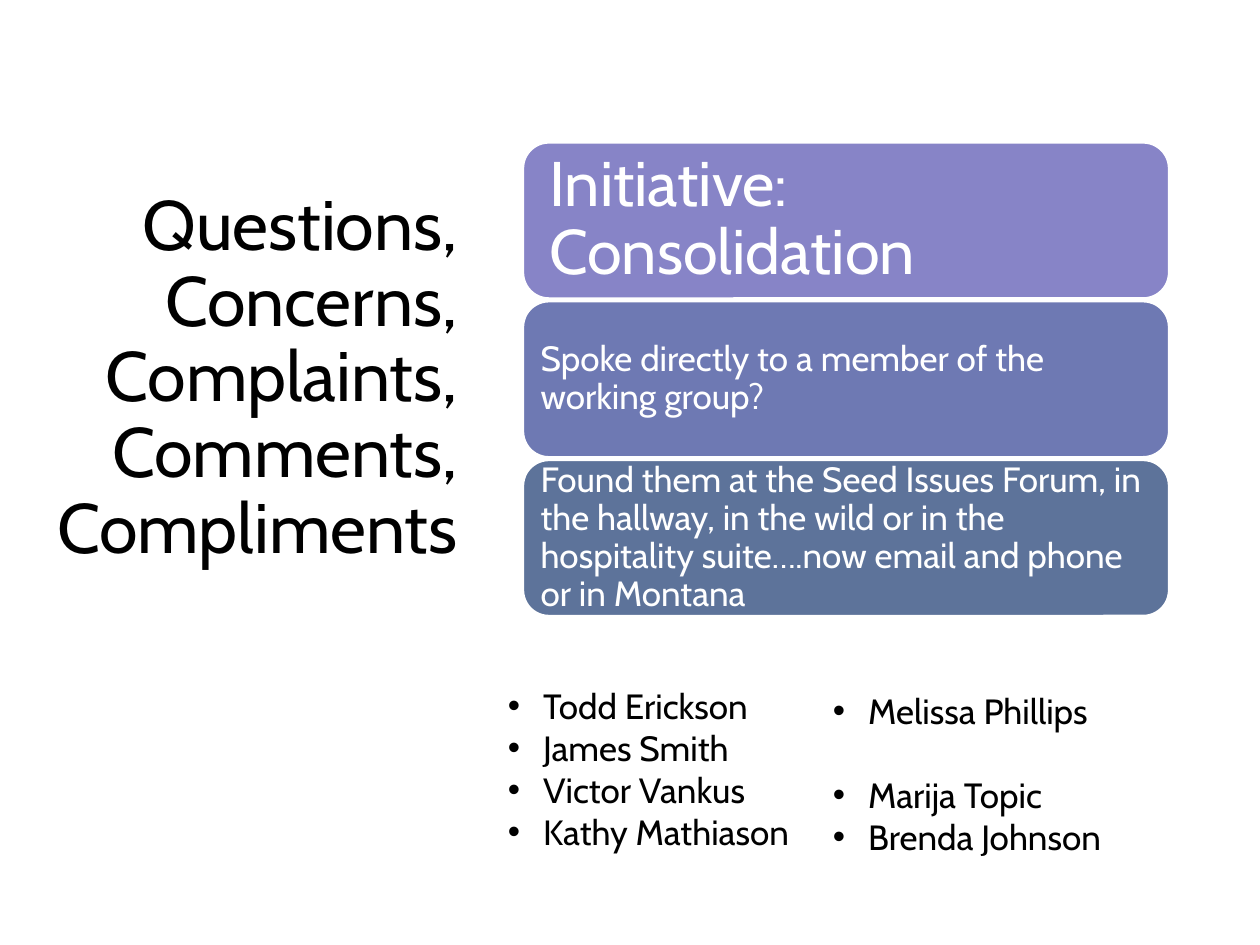
import pptx
import pptx.util
import pptx.dml.color
import pptx.enum.shapes
import pptx.enum.text
import pptx.oxml.ns
import lxml.etree

Inches = pptx.util.Inches
Pt = pptx.util.Pt
ANCHOR = pptx.enum.text.MSO_ANCHOR
ALIGN = pptx.enum.text.PP_ALIGN

COLORS = {
    "text": "000000",
    "white": "FFFFFF",
    "lilac": "8784C7",
    "violet": "6E79B3",
    "slate": "5D739A",
}


def rgb(name):
    return pptx.dml.color.RGBColor.from_string(COLORS[name])


def add_run(p, text, size, color):
    r = p.add_run()
    r.text = text
    r.font.name = "Cabin"
    r.font.size = Pt(size)
    r.font.color.rgb = rgb(color)


prs = pptx.Presentation()
prs.slide_width = Inches(10)
prs.slide_height = Inches(7.5)
s = prs.slides.add_slide(prs.slide_layouts[3])
title, left_list, right_list = s.placeholders

title.left, title.top = Inches(0.19), Inches(0.72)
title.width, title.height = Inches(3.54), Inches(4.58)
tf = title.text_frame
tf.auto_size = pptx.enum.text.MSO_AUTO_SIZE.NONE
tf.vertical_anchor = ANCHOR.MIDDLE
p = tf.paragraphs[0]
p.alignment = ALIGN.RIGHT
p.line_spacing = 0.9
add_run(p, "Questions, Concerns, Complaints,", 40, "text")
p.add_line_break()
add_run(p, "Comments, Compliments", 40, "text")

cards = [
    ("Initiative: Consolidation", "lilac", 36, 0.15),
    ("Spoke directly to a member of the working group?", "violet", 20, 0.08),
    ("Found them at the Seed Issues Forum, in the hallway, in the wild or in the "
     "hospitality suite….now email and phone or in Montana", "slate", 20, 0.08),
]
for i, (text, color, size, inset) in enumerate(cards):
    sp = s.shapes.add_shape(
        pptx.enum.shapes.MSO_SHAPE.ROUNDED_RECTANGLE,
        Inches(4.15), Inches(1.13 + 1.26 * i), Inches(5.13), Inches(1.24))
    sp.shadow.inherit = False
    sp.fill.solid()
    sp.fill.fore_color.rgb = rgb(color)
    sp.line.color.rgb = rgb("white")
    sp.line.width = Pt(1.5)
    tf = sp.text_frame
    tf.word_wrap = True
    tf.vertical_anchor = ANCHOR.MIDDLE
    tf.margin_left = tf.margin_right = Inches(inset)
    tf.margin_top = tf.margin_bottom = Inches(inset)
    p = tf.paragraphs[0]
    p.alignment = ALIGN.LEFT
    p.line_spacing = 0.9
    add_run(p, text, size, color="white")

members = [
    (left_list, 3.93, 5.38,
     [("Todd Erickson", 0), ("James Smith", 0), ("Victor Vankus", 0), ("Kathy Mathiason", 0)]),
    (right_list, 6.51, 5.42,
     [("Melissa Phillips", 0), ("Marija Topic", 24), ("Brenda Johnson", 0)]),
]
for sp, left, top, names in members:
    sp.left, sp.top = Inches(left), Inches(top)
    sp.width, sp.height = Inches(2.77), Inches(1.5)
    tf = sp.text_frame
    tf.auto_size = pptx.enum.text.MSO_AUTO_SIZE.NONE
    tf.vertical_anchor = ANCHOR.TOP
    for i, (name, gap) in enumerate(names):
        p = tf.add_paragraph() if i else tf.paragraphs[0]
        pPr = p._p.get_or_add_pPr()
        pPr.set("marL", str(Inches(0.28)))
        pPr.set("indent", str(Inches(-0.28)))
        font = lxml.etree.SubElement(pPr, pptx.oxml.ns.qn("a:buFont"))
        font.set("typeface", "Arial")
        bullet = lxml.etree.SubElement(pPr, pptx.oxml.ns.qn("a:buChar"))
        bullet.set("char", "•")
        p.space_before = Pt(gap)
        add_run(p, name, 20, "text")

prs.save("out.pptx")
